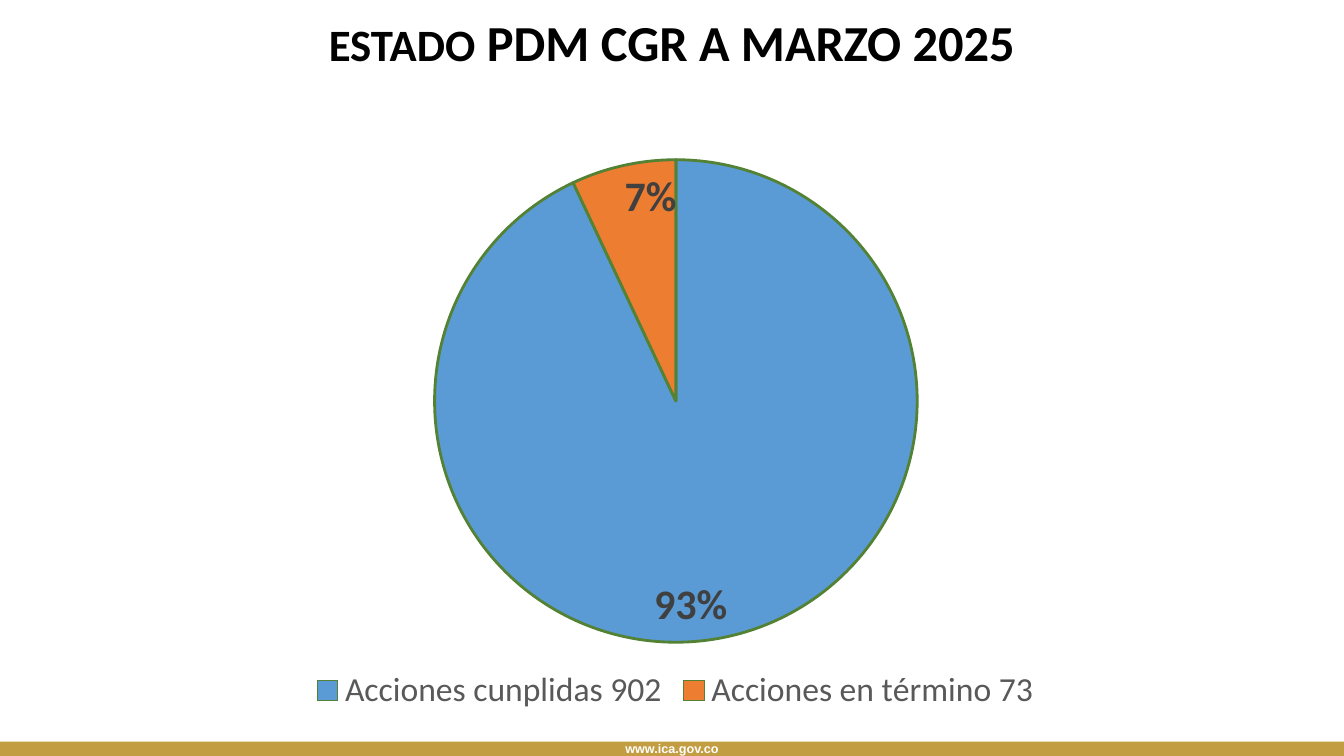
from lxml import etree
from pptx import Presentation
from pptx.chart.data import CategoryChartData
from pptx.dml.color import RGBColor
from pptx.enum.chart import XL_CHART_TYPE, XL_LABEL_POSITION, XL_LEGEND_POSITION
from pptx.enum.shapes import MSO_SHAPE
from pptx.enum.text import MSO_ANCHOR, PP_ALIGN
from pptx.oxml.ns import qn
from pptx.util import Inches, Pt

PIE = XL_CHART_TYPE.PIE
INSIDE_END = XL_LABEL_POSITION.INSIDE_END
BOTTOM = XL_LEGEND_POSITION.BOTTOM
RECTANGLE = MSO_SHAPE.RECTANGLE
TOP, MIDDLE = MSO_ANCHOR.TOP, MSO_ANCHOR.MIDDLE
CENTER = PP_ALIGN.CENTER

COLORS = {
    "title": "000000", "footer": "C39D41", "footer_text": "FFFFFF",
    "done": "5B9BD5", "open": "ED7D31", "outline": "548235",
    "label": "404040", "legend": "595959",
}
WIDTH, HEIGHT = 13.33, 7.5
ACTIONS = [("Acciones cunplidas 902", 0.93, "done"),
           ("Acciones en término 73", 0.07, "open")]
PLOT_SHARES = {"x": 0.288, "y": 0.109, "w": 0.425, "h": 0.77}


def rgb(name):
    return RGBColor.from_string(COLORS[name])


def set_font(font, color, **formats):
    font.color.rgb = rgb(color)
    for name, value in formats.items():
        setattr(font, name, value)


def add_footer(page, box):
    band = page.shapes.add_shape(RECTANGLE, *box)
    band.shadow.inherit = False
    band.fill.solid()
    band.fill.fore_color.rgb = rgb("footer")
    band.line.fill.background()
    frame = band.text_frame
    frame.vertical_anchor = MIDDLE
    frame.margin_top = frame.margin_bottom = 0
    para = frame.paragraphs[0]
    para.alignment = CENTER
    span = para.add_run()
    span.text = "www.ica.gov.co"
    set_font(span.font, "footer_text", name="Arial", size=Pt(9), bold=True)


def add_title(page, box):
    frame = page.shapes.add_textbox(*box).text_frame
    frame.word_wrap = True
    frame.vertical_anchor = TOP
    para = frame.paragraphs[0]
    para.alignment = CENTER
    para.line_spacing = 0.9
    for text, size in (("ESTADO", 32), (" PDM CGR A MARZO 2025", 36)):
        span = para.add_run()
        span.text = text
        set_font(span.font, "title", name="Calibri", size=Pt(size), bold=True)


def fix_plot_area(chart):
    """Place the pie at PLOT_SHARES of the chart's box."""
    area = chart.plots[0]._element.getparent()
    for old in area.findall(qn("c:layout")):
        area.remove(old)
    layout = etree.Element(qn("c:layout"))
    area.insert(0, layout)
    manual = etree.SubElement(layout, qn("c:manualLayout"))
    settings = {"layoutTarget": "inner", "xMode": "edge", "yMode": "edge", **PLOT_SHARES}
    for name, value in settings.items():
        etree.SubElement(manual, qn(f"c:{name}")).set("val", str(value))


def add_status_pie(page, box):
    data = CategoryChartData(number_format="0%")
    data.categories = [name for name, _, _ in ACTIONS]
    data.add_series("Series 1", [share for _, share, _ in ACTIONS])
    chart = page.shapes.add_chart(PIE, *box, data).chart
    chart.has_title = False
    set_font(chart.font, "title", name="Calibri", size=Pt(10))
    fix_plot_area(chart)

    chart.has_legend = True
    legend = chart.legend
    legend.position = BOTTOM
    legend.include_in_layout = False
    set_font(legend.font, "legend", name="Calibri", size=Pt(24))

    plot = chart.plots[0]
    plot.vary_by_categories = True
    for index, (_, _, color) in enumerate(ACTIONS):
        slice_format = plot.series[0].points[index].format
        slice_format.fill.solid()
        slice_format.fill.fore_color.rgb = rgb(color)
        slice_format.line.color.rgb = rgb("outline")
        slice_format.line.width = Pt(2)

    labels = plot.series[0].data_labels
    set_font(labels.font, "label", name="Calibri", size=Pt(30), bold=True)
    formats = {"show_value": True, "show_percentage": False, "number_format": "0%",
               "number_format_is_linked": False, "position": INSIDE_END}
    for name, value in formats.items():
        setattr(labels, name, value)


def area(left, top, width, height):
    """Turn shares of the slide into a box."""
    return [Inches(share * side) for share, side in
            zip((left, top, width, height), (WIDTH, HEIGHT) * 2)]


def main():
    deck = Presentation()
    deck.slide_width, deck.slide_height = Inches(WIDTH), Inches(HEIGHT)
    page = deck.slides.add_slide(deck.slide_layouts[6])
    add_footer(page, area(0, 0.981, 1, 0.019))
    add_title(page, area(0.0885, 0.017, 0.823, 0.104))
    add_status_pie(page, area(0.08, 0.121, 0.845, 0.829))
    deck.save("out.pptx")


if __name__ == "__main__":
    main()
